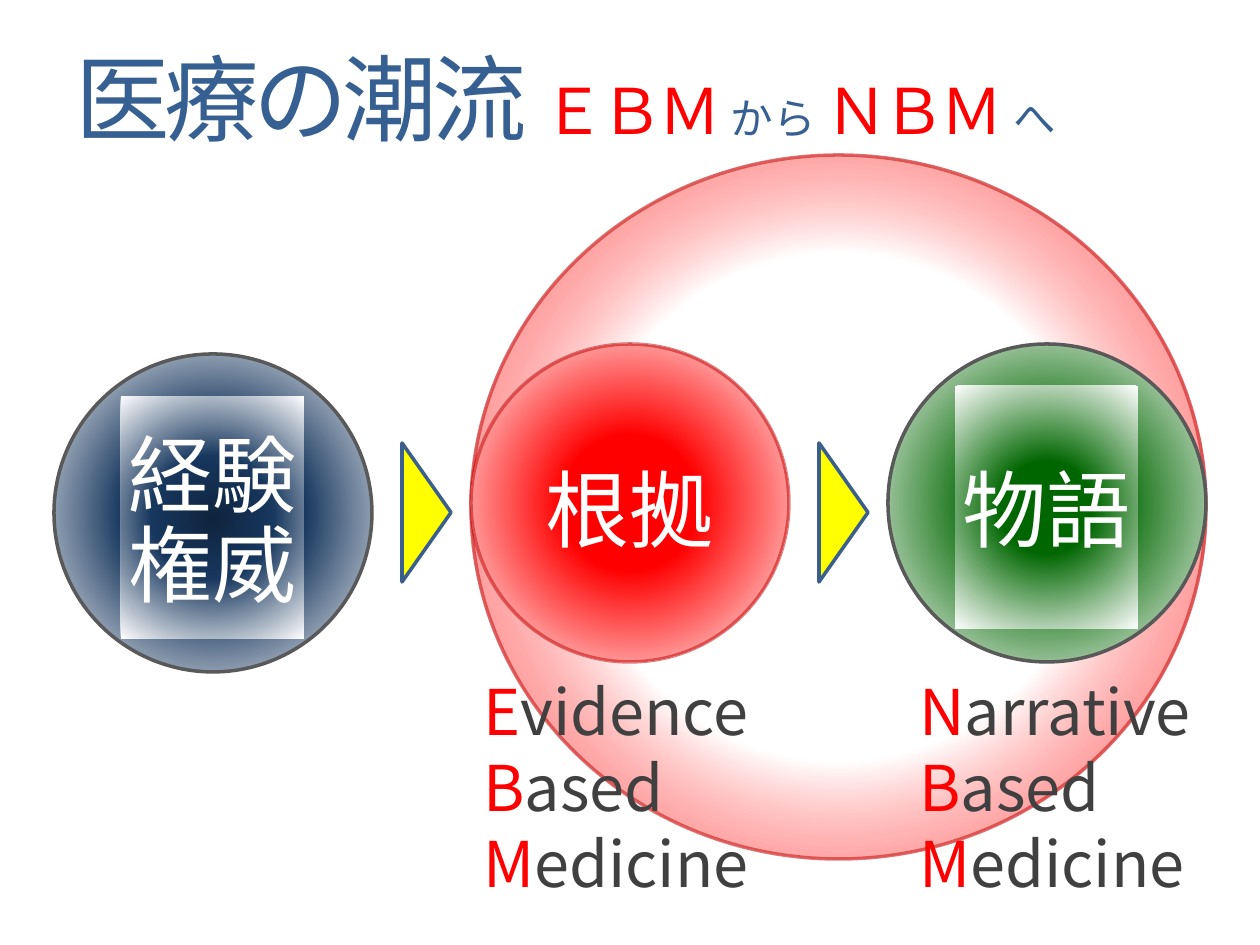
from lxml import etree
from pptx import Presentation
from pptx.dml.color import RGBColor
from pptx.enum.shapes import MSO_SHAPE
from pptx.enum.text import MSO_ANCHOR, PP_ALIGN
from pptx.oxml import parse_xml
from pptx.oxml.ns import nsdecls, qn
from pptx.util import Pt

OVAL, RECT, WEDGE = MSO_SHAPE.OVAL, MSO_SHAPE.RECTANGLE, MSO_SHAPE.ISOSCELES_TRIANGLE
MIDDLE, CENTER = MSO_ANCHOR.MIDDLE, PP_ALIGN.CENTER
PX = 914400 / 126

THEME = {
    "font": "Noto Sans CJK JP",
    "blue": "376092", "red": "FF0000", "white": "FFFFFF", "ink": "404040",
    "yellow": "FFFF00", "edge": "3A5F8C", "gray": "595959", "wine": "C00000",
    "navy": "17375E", "deep": "0F243E", "green": "006600",
    "head": 54, "ball": 48, "big": 36, "small": 24.3,
}


def add(shapes, kind, at, fill=None, line=None, clear=False):
    """Add a shape, or a text box if kind is None; a list fill is a radial gradient."""
    rect = [round(n * PX) for n in at]
    if kind is None:
        box = shapes.add_textbox(*rect)
        box.text_frame.word_wrap = True
        return box
    shape = shapes.add_shape(kind, *rect)
    shape.shadow.inherit = False
    shape.fill.solid()
    if isinstance(fill, list):
        stops = "".join(
            f'<a:gs pos="{pos * 1000}"><a:srgbClr val="{THEME[hue]}">'
            f'<a:alpha val="{alpha * 1000}"/></a:srgbClr></a:gs>'
            for pos, hue, alpha in fill)
        props = shape._element.spPr
        props.replace(props.find(qn("a:solidFill")), parse_xml(
            f'<a:gradFill {nsdecls("a")} rotWithShape="1"><a:gsLst>{stops}</a:gsLst>'
            '<a:path path="circle"><a:fillToRect l="50000" t="50000" r="50000" b="50000"/>'
            '</a:path></a:gradFill>'))
    else:
        shape.fill.fore_color.rgb = RGBColor.from_string(THEME[fill])
    if line is None:
        shape.line.fill.background()
        return shape
    shape.line.color.rgb = RGBColor.from_string(THEME[line])
    shape.line.width = Pt(2)
    if clear:
        hue = shape._element.spPr.find(qn("a:ln")).find(".//" + qn("a:srgbClr"))
        etree.SubElement(hue, qn("a:alpha")).set("val", "50000")
    return shape


def write(para, runs):
    """Fill a paragraph with runs of (text, size, colour, letter spacing)."""
    for text, size, hue, gap in runs:
        run = para.add_run()
        run.text = text
        run.font.size = Pt(THEME[size])
        run.font.name = THEME["font"]
        run.font.color.rgb = RGBColor.from_string(THEME[hue])
        props = run._r.get_or_add_rPr()
        props.set("spc", str(gap * 100))
        etree.SubElement(props, qn("a:ea")).set("typeface", THEME["font"])


deck = Presentation()
deck.slide_width, deck.slide_height = round(1260 * PX), round(945 * PX)
slide = deck.slides.add_slide(deck.slide_layouts[6])
shapes = slide.shapes

# Large ring behind the two later stages
ring = [(50, "white", 100), (90, "red", 40), (92, "red", 48)]
add(shapes, OVAL, (471, 155, 735, 704), ring, "wine", True)

# Title
title = add(shapes, None, (63, 38, 1134, 117)).text_frame
title.vertical_anchor = MIDDLE
write(title.paragraphs[0], [
    ("医療の潮流 ", "head", "blue", -3),
    ("ＥＢＭ", "big", "red", -3),
    (" ", "small", "blue", -3),
    ("から ", "small", "blue", 0),
    ("ＮＢＭ", "big", "red", -3),
    (" ", "small", "blue", -3),
    ("へ", "small", "blue", 0),
])

# Stages: a ball with its word on an inner panel
red = [(0, "red", 100), (30, "red", 100), (100, "white", 100)]
navy = [(0, "deep", 100), (40, "navy", 100), (100, "white", 100)]
green = [(0, "green", 100), (30, "green", 100), (100, "white", 100)]
stages = [
    ("根拠", 471, 344, red, "wine", None),
    ("経験権威", 54, 354, navy, "gray", RECT),
    ("物語", 888, 344, green, "gray", RECT),
]
for word, left, top, fill, line, kind in stages:
    group = shapes.add_group_shape().shapes
    add(group, OVAL, (left, top, 318, 318), fill, line, line == "wine")
    frame = add(group, kind, (left + 67, top + 42, 183, 243), fill).text_frame
    frame.word_wrap = True
    frame.vertical_anchor = MIDDLE
    frame.margin_left = frame.margin_right = frame.margin_bottom = 0
    frame.margin_top = round(11 * PX)
    para = frame.paragraphs[0]
    para.alignment = CENTER
    para.line_spacing = Pt(51.4)
    write(para, [(word, "ball", "white", 0)])

# Wedges pointing to the next stage
for left in (357, 774):
    add(shapes, WEDGE, (left, 488, 139, 49), "yellow", "edge").rotation = 90

# Spelled-out names with red initials
for left, first in ((471, "Evidence"), (907, "Narrative")):
    frame = add(shapes, None, (left, 662, 338, 242)).text_frame
    frame.margin_top = round(10 * PX)
    for i, word in enumerate((first, "Based", "Medicine")):
        para = frame.add_paragraph() if i else frame.paragraphs[0]
        para.line_spacing = Pt(43.4)
        write(para, [(word[0], "big", "red", 0), (word[1:], "big", "ink", 0)])

deck.save("out.pptx")
